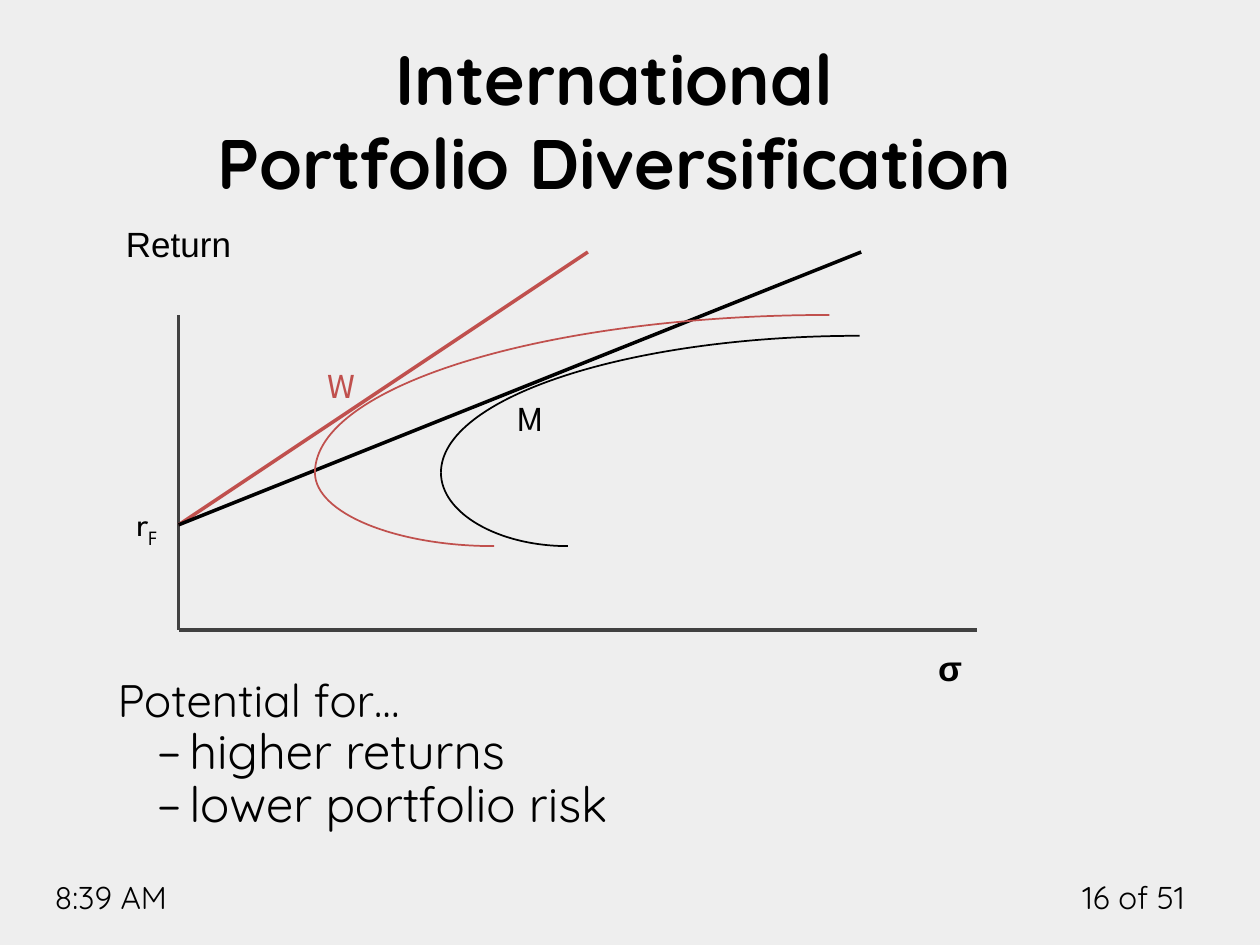
import lxml.etree
import pptx
import pptx.dml.color
import pptx.enum.shapes
import pptx.enum.text
import pptx.oxml.ns
import pptx.util

Cm = pptx.util.Cm
Pt = pptx.util.Pt
qn = pptx.oxml.ns.qn
ALIGN = pptx.enum.text.PP_ALIGN
COLORS = {"paper": "EEEEEE", "ink": "000000", "axis": "414141", "world": "C0504D"}


def rgb(name):
    return pptx.dml.color.RGBColor.from_string(COLORS[name])


def write(para, text, font, size, color="ink", bold=False):
    span = para.add_run()
    span.text = text
    for key, value in {"name": font, "size": Pt(size), "bold": bold}.items():
        setattr(span.font, key, value)
    span.font.color.rgb = rgb(color)
    return span


deck = pptx.Presentation()
deck.slide_width, deck.slide_height = Cm(25.4), Cm(19.05)
page = deck.slides.add_slide(deck.slide_layouts[5])
page.background.fill.solid()
page.background.fill.fore_color.rgb = rgb("paper")

title = page.shapes.title
placement = {"left": 1.69, "top": 0.63, "width": 21.39, "height": 3.6}
for key, value in placement.items():
    setattr(title, key, Cm(value))
title_format = {
    "vertical_anchor": pptx.enum.text.MSO_ANCHOR.BOTTOM,
    "auto_size": pptx.enum.text.MSO_AUTO_SIZE.NONE,
    "word_wrap": True,
}
for key, value in title_format.items():
    setattr(title.text_frame, key, value)
para = title.text_frame.paragraphs[0]
para.alignment = ALIGN.CENTER
write(para, "International", "Quicksand", 40, bold=True)
para.add_line_break()
write(para, "Portfolio Diversification", "Quicksand", 40, bold=True)

axis_x, axis_y = 3.6, 12.7
risk_free_y, line_top = 10.58, 5.08
for start_x, start_y, end_x, end_y, color in [
    (axis_x, 6.35, axis_x, axis_y, "axis"),
    (19.69, axis_y, axis_x, axis_y, "axis"),
    (11.85, line_top, axis_x, risk_free_y, "world"),
    (17.36, line_top, axis_x, risk_free_y, "ink"),
]:
    line = page.shapes.add_connector(
        pptx.enum.shapes.MSO_CONNECTOR.STRAIGHT,
        Cm(start_x), Cm(start_y), Cm(end_x), Cm(end_y),
    )
    line.line.color.rgb = rgb(color)
    line.line.width = Pt(2)
    lxml.etree.SubElement(line._element.spPr, qn("a:effectLst"))

vertex_y, kappa = 9.53, 0.55
for vertex_x, end_x, end_y, color in [
    (6.35, 16.72, 6.35, "world"),
    (8.89, 17.33, 6.77, "ink"),
    (8.89, 11.45, 11.01, "ink"),
    (6.35, 9.96, 11.01, "world"),
]:
    curve = [
        (vertex_x, vertex_y),
        (vertex_x, vertex_y + kappa * (end_y - vertex_y)),
        (end_x + kappa * (vertex_x - end_x), end_y),
        (end_x, end_y),
    ]
    points = [(x * 100, y * 100) for x, y in curve]
    builder = page.shapes.build_freeform(*points[0], scale=Cm(0.01))
    builder.add_line_segments(points[1:], close=False)
    frontier = builder.convert_to_shape()
    frontier.shadow.inherit = False
    frontier.fill.background()
    frontier.line.color.rgb = rgb(color)
    frontier.line.width = Pt(1)
    segments = list(frontier._element.iter(qn("a:lnTo")))
    bezier = lxml.etree.SubElement(segments[0].getparent(), qn("a:cubicBezTo"))
    for segment in segments:
        bezier.append(segment[0])
        segment.getparent().remove(segment)

for text, subscript, left, top, width, align, font, size, color, bold in [
    ("16 of 51", "", 21.16, 17.58, 2.97, ALIGN.RIGHT, "Quicksand", 18, "ink", False),
    ("8:39 AM", "", 0.85, 17.58, 4.01, ALIGN.LEFT, "Quicksand", 18, "ink", False),
    ("σ", "", 18.62, 12.9, 1.07, ALIGN.CENTER, "Arial", 20, "ink", True),
    ("Return", "", 1.06, 4.37, 5.08, ALIGN.CENTER, "Arial", 20, "ink", False),
    ("r", "F", 2.33, 9.98, 1.27, ALIGN.CENTER, "League Spartan", 20, "ink", False),
    ("M", "", 10.16, 7.87, 1.07, ALIGN.CENTER, "League Spartan", 20, "ink", False),
    ("W", "", 6.35, 7.2, 1.07, ALIGN.CENTER, "League Spartan", 20, "world", False),
]:
    box = page.shapes.add_textbox(Cm(left), Cm(top), Cm(width), Cm(1.09))
    box.text_frame.word_wrap = True
    para = box.text_frame.paragraphs[0]
    para.alignment = align
    write(para, text, font, size, color, bold)
    if subscript:
        span = write(para, subscript, font, size, color, bold)
        span._r.get_or_add_rPr().set("baseline", "-25000")

body = page.shapes.add_textbox(Cm(2.12), Cm(13.54), Cm(15.88), Cm(3.81))
body.text_frame.word_wrap = True
para = body.text_frame.paragraphs[0]
para.line_spacing = 0.9
write(para, "Potential for…", "Quicksand", 26)
for benefit in ["higher returns", "lower portfolio risk"]:
    para = body.text_frame.add_paragraph()
    para.level = 1
    para.line_spacing = 0.9
    properties = para._p.get_or_add_pPr()
    properties.set("marL", str(Cm(1.45)))
    properties.set("indent", str(Cm(-0.66)))
    for tag, key, value in [
        ("a:buFont", "typeface", "Quicksand"),
        ("a:buChar", "char", "–"),
    ]:
        lxml.etree.SubElement(properties, qn(tag)).set(key, value)
    write(para, benefit, "Quicksand", 28)

deck.save("out.pptx")
